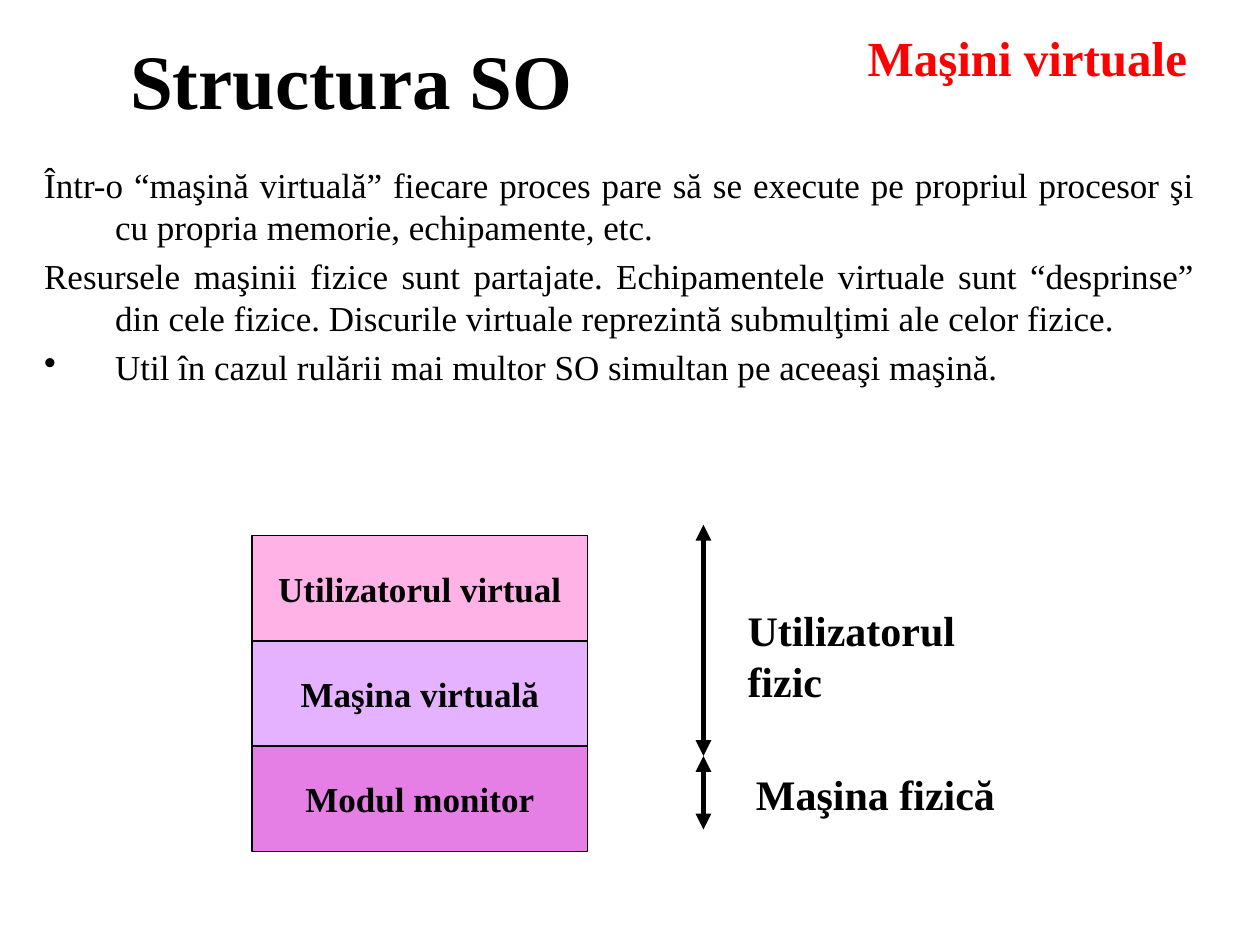
import pptx
import pptx.dml.color
import pptx.enum.shapes
import pptx.enum.text
import pptx.oxml
import pptx.oxml.ns
import pptx.util
from lxml import etree

Cm = pptx.util.Cm
Pt = pptx.util.Pt
RGBColor = pptx.dml.color.RGBColor
Align = pptx.enum.text.PP_ALIGN
Anchor = pptx.enum.text.MSO_ANCHOR
AutoSize = pptx.enum.text.MSO_AUTO_SIZE
qn = pptx.oxml.ns.qn

FONT = "Times New Roman"
BLACK = RGBColor(0, 0, 0)
RED = RGBColor(0xFF, 0, 0)
PINK = RGBColor(0xFF, 0x66, 0xCC)
VIOLET = RGBColor(0xCC, 0x66, 0xFF)
PURPLE = RGBColor(0xCC, 0, 0xCC)

TITLE = "Structura SO"
TOPIC = "Maşini virtuale"
# text, has a bullet
POINTS = [
    ("Într-o “maşină virtuală” fiecare proces pare să se execute pe propriul "
     "procesor şi cu propria memorie, echipamente, etc. ", False),
    ("Resursele maşinii fizice sunt partajate. Echipamentele virtuale sunt “desprinse” "
     "din cele fizice. Discurile virtuale reprezintă submulţimi ale celor fizice.", False),
    ("Util în cazul rulării mai multor SO simultan pe aceeaşi maşină.", True),
]
LAYERS = [
    ("Utilizatorul virtual", PINK),
    ("Maşina virtuală", VIOLET),
    ("Modul monitor", PURPLE),
]
# text, left, top, width of the label, then top and bottom of its arrow, in cm
LEVELS = [
    ("Utilizatorul fizic", 14.82, 12.07, 6.4, 10.58, 15.24),
    ("Maşina fizică", 14.99, 15.37, 5.33, 15.24, 16.72),
]
LAYER_LEFT, LAYER_TOP, LAYER_WIDTH, LAYER_HEIGHT = 5.08, 10.8, 6.77, 2.12
ARROW_X = 14.18


def write(shape, lines, size, color=BLACK, bold=True, align=Align.CENTER,
          anchor=Anchor.TOP, wrap=True, auto_size=AutoSize.NONE):
    frame = shape.text_frame
    frame.text = "\n".join(lines)
    frame.word_wrap = wrap
    frame.auto_size = auto_size
    frame.vertical_anchor = anchor
    for para in frame.paragraphs:
        para.alignment = align
        for span in para.runs:
            span.font.name = FONT
            span.font.size = Pt(size)
            span.font.bold = bold
            span.font.color.rgb = color


def add_box(page, left, top, width, height):
    return page.shapes.add_textbox(Cm(left), Cm(top), Cm(width), Cm(height))


def add_points(page):
    box = add_box(page, 0.64, 3.18, 23.7, 6.35)
    write(box, [text for text, _ in POINTS], 20, bold=False, align=Align.JUSTIFY)
    for para, (_, bulleted) in zip(box.text_frame.paragraphs, POINTS):
        para.space_before = Pt(4)
        properties = para._p.get_or_add_pPr()
        properties.set("marL", str(Cm(1.43)))
        properties.set("indent", str(-Cm(1.43)))
        if bulleted:
            etree.SubElement(properties, qn("a:buChar")).set("char", "•")
        else:
            etree.SubElement(properties, qn("a:buNone"))


def add_layers(page):
    for index, (text, color) in enumerate(LAYERS):
        layer = page.shapes.add_shape(
            pptx.enum.shapes.MSO_SHAPE.RECTANGLE,
            Cm(LAYER_LEFT), Cm(LAYER_TOP + index * LAYER_HEIGHT),
            Cm(LAYER_WIDTH), Cm(LAYER_HEIGHT))
        layer.shadow.inherit = False
        layer.fill.solid()
        layer.fill.fore_color.rgb = color
        tint = layer.fill._xPr.find(qn("a:solidFill"))[0]
        etree.SubElement(tint, qn("a:alpha")).set("val", "50000")
        layer.line.color.rgb = BLACK
        layer.line.width = Pt(0.75)
        write(layer, [text], 20, anchor=Anchor.MIDDLE, wrap=False)


def add_double_arrow(page, top, bottom):
    arrow = page.shapes.add_connector(
        pptx.enum.shapes.MSO_CONNECTOR.STRAIGHT,
        Cm(ARROW_X), Cm(top), Cm(ARROW_X), Cm(bottom))
    arrow.line.color.rgb = BLACK
    arrow.line.width = Pt(3)
    outline = arrow.line._get_or_add_ln()
    for end in ("a:headEnd", "a:tailEnd"):
        etree.SubElement(outline, qn(end)).set("type", "triangle")
    etree.SubElement(arrow._element.spPr, qn("a:effectLst"))


def add_levels(page):
    for text, left, label_top, width, top, bottom in LEVELS:
        label = add_box(page, left, label_top, width, 1.27)
        write(label, [text], 24, align=Align.LEFT, wrap=False,
              auto_size=AutoSize.SHAPE_TO_FIT_TEXT)
        add_double_arrow(page, top, bottom)


def main():
    deck = pptx.Presentation()
    deck.slide_width, deck.slide_height = Cm(25.4), Cm(19.05)
    page = deck.slides.add_slide(deck.slide_layouts[5])

    title = page.shapes.title
    title.left, title.top, title.width, title.height = Cm(0), Cm(0), Cm(14.18), Cm(3.18)
    write(title, [TITLE], 44, anchor=Anchor.MIDDLE)

    topic = add_box(page, 16.66, 0.43, 8.1, 1.45)
    write(topic, [TOPIC], 28, color=RED, auto_size=AutoSize.SHAPE_TO_FIT_TEXT)

    add_points(page)
    add_layers(page)
    add_levels(page)
    deck.save("out.pptx")


if __name__ == "__main__":
    main()
